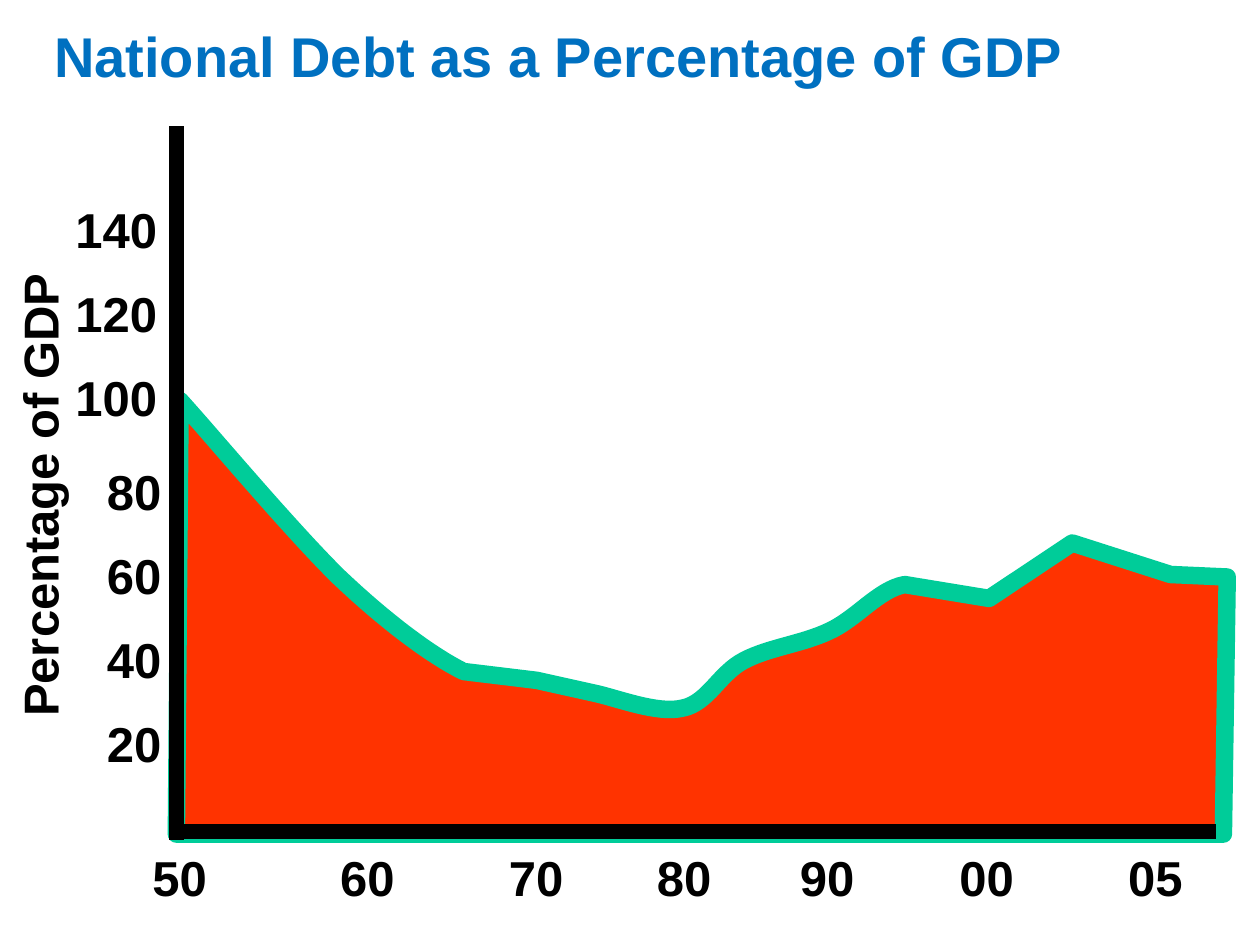
from dataclasses import dataclass

from lxml.etree import SubElement
from pptx import Presentation
from pptx.dml.color import RGBColor
from pptx.enum.shapes import MSO_CONNECTOR
from pptx.enum.text import MSO_ANCHOR, MSO_AUTO_SIZE, PP_ALIGN
from pptx.oxml.ns import qn
from pptx.util import Inches, Pt


@dataclass(frozen=True)
class Theme:
    """Colours and sizes of the slide."""
    font: str = "Arial"
    ink: str = "000000"
    paper: str = "FFFFFF"
    title: str = "0070C0"
    area: str = "FF3300"
    edge: str = "00CC99"
    head: int = 32
    label: int = 28
    axis: int = 9
    rim: int = 10


THEME = Theme()
CELL = 1 / 12
ROW = 0.52
YEAR_TOP = 6.73

# Each tick: text, left column, top row, width in columns
LEVELS = [("20", 9, 68, 11), ("40", 9, 60, 13), ("60", 9, 52, 11),
          ("80", 9, 44, 11), ("100", 6, 35, 13), ("120", 6, 27, 14),
          ("140", 6, 19, 15)]
YEARS = [("50", 1, 0.85), ("60", 2.58, 0.67), ("70", 3.92, 0.67),
         ("80", 5, 0.86), ("90", 6.08, 0.97), ("00", 7.33, 1),
         ("05", 8.75, 0.84)]
START = (1.43, 3.18)
DEBT = [
    [(1.64, 3.41), (2.32, 4.22), (2.69, 4.58)],
    [(3.07, 4.94), (3.42, 5.2), (3.68, 5.33)],
    [(4.26, 5.4)],
    [(4.71, 5.5)],
    [(4.9, 5.54), (5.22, 5.67), (5.42, 5.62)],
    [(5.62, 5.58), (5.71, 5.34), (5.91, 5.24)],
    [(6.1, 5.14), (6.37, 5.11), (6.58, 5.01)],
    [(6.8, 4.91), (6.97, 4.68), (7.18, 4.64)],
    [(7.85, 4.75)], [(8.51, 4.31)], [(9.29, 4.56)], [(9.74, 4.58)],
    [(9.71, 6.62)], [(1.4, 6.62)],
]


def color(code):
    """Turn a hex code into a colour."""
    return RGBColor.from_string(code)


def paint(fill, code):
    """Make a fill solid."""
    fill.solid()
    fill.fore_color.rgb = color(code)


def write(shape, text, size, code, align):
    """Set one bold line of text in a shape."""
    frame = shape.text_frame
    frame.word_wrap = True
    frame.auto_size = MSO_AUTO_SIZE.NONE
    frame.text = text
    line = frame.paragraphs[0]
    line.alignment = align
    line.line_spacing = 0.9
    line.font.name = THEME.font
    line.font.size = Pt(size)
    line.font.bold = True
    line.font.color.rgb = color(code)


def label(slide, text, left, top, width, align=PP_ALIGN.CENTER):
    """Add a text label."""
    box = slide.shapes.add_textbox(*map(Inches, (left, top, width, ROW)))
    write(box, text, THEME.label, THEME.ink, align)
    return box


def head(slide, text):
    """Place and format the title."""
    title = slide.shapes.title
    title.left, title.top, title.width, title.height = map(
        Inches, (0.33, 0.18, 9.61, 0.59))
    paint(title.fill, THEME.paper)
    write(title, text, THEME.head, THEME.title, PP_ALIGN.LEFT)
    title.text_frame.vertical_anchor = MSO_ANCHOR.MIDDLE


def curve(ends, steps=16):
    """Sample a cubic curve given by four points."""
    for step in range(1, steps + 1):
        t = step / steps
        parts = ((1 - t) ** 3, 3 * t * (1 - t) ** 2,
                 3 * t * t * (1 - t), t ** 3)
        yield tuple(sum(w * p[i] for w, p in zip(parts, ends))
                    for i in (0, 1))


def trace(start, parts):
    """List the points along straight and curved parts."""
    points = [start]
    for part in parts:
        bent = len(part) == 3
        points.extend(curve([points[-1], *part]) if bent else part)
    return [(Inches(x), Inches(y)) for x, y in points]


def area(slide):
    """Draw the filled debt area."""
    first, *rest = trace(START, DEBT)
    pen = slide.shapes.build_freeform(*first)
    pen.add_line_segments(rest, close=True)
    shape = pen.convert_to_shape()
    shape.shadow.inherit = False
    paint(shape.fill, THEME.area)
    paint(shape.line.fill, THEME.edge)
    shape.line.width = Pt(THEME.rim)
    SubElement(shape.line._get_or_add_ln(), qn("a:round"))


def axis(slide, *ends):
    """Draw a thick axis line."""
    line = slide.shapes.add_connector(
        MSO_CONNECTOR.STRAIGHT, *map(Inches, ends))
    paint(line.line.fill, THEME.ink)
    line.line.width = Pt(THEME.axis)
    SubElement(line._element.spPr, qn("a:effectLst"))


def main():
    """Build and save the slide."""
    deck = Presentation()
    deck.slide_width, deck.slide_height = Inches(10), Inches(7.5)
    slide = deck.slides.add_slide(deck.slide_layouts[5])
    head(slide, "National Debt as a Percentage of GDP")
    for text, col, row, span in LEVELS:
        label(slide, text, col * CELL, row * CELL, span * CELL, PP_ALIGN.LEFT)
    for text, left, width in YEARS:
        label(slide, text, left, YEAR_TOP, width)
    label(slide, "Percentage of GDP", -1.55, 3.67, 3.78).rotation = 270
    area(slide)
    axis(slide, 1.36, 6.6, 9.65, 6.6)
    axis(slide, 1.4, 1, 1.4, 6.67)
    deck.save("out.pptx")


if __name__ == "__main__":
    main()
